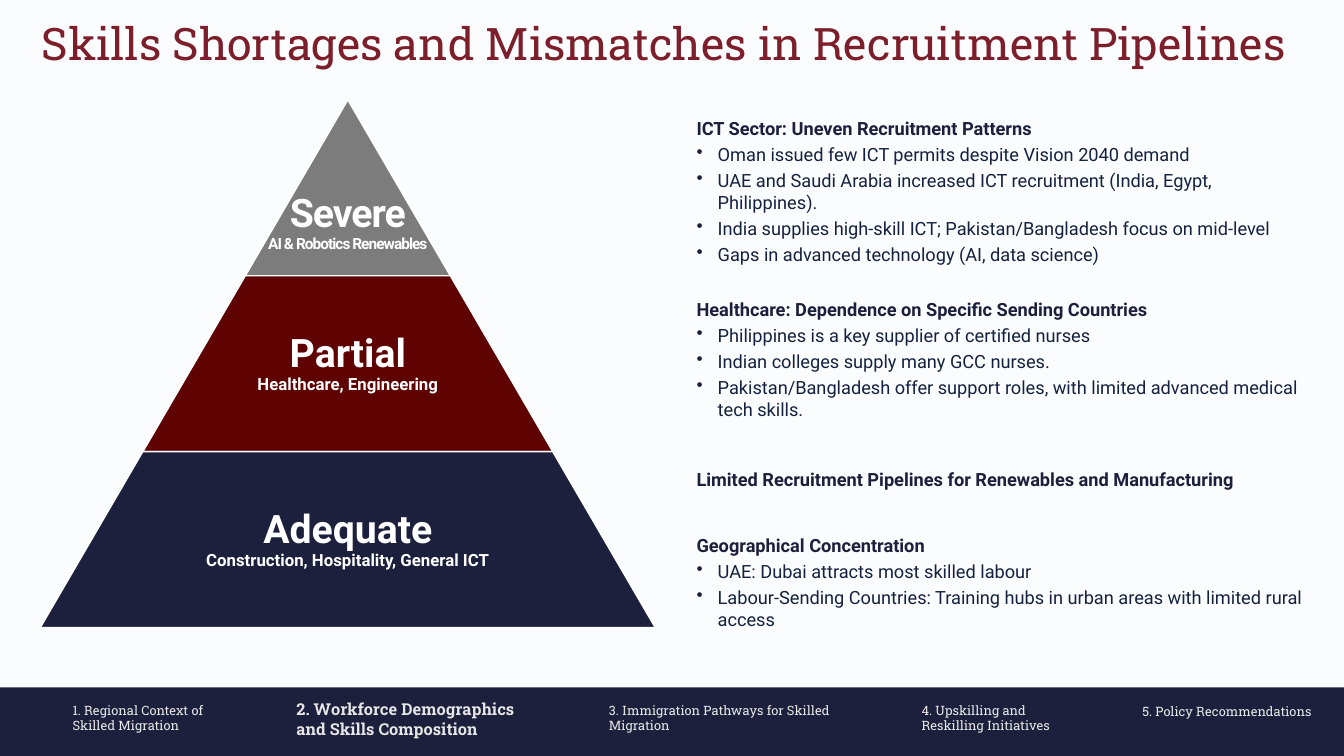
from dataclasses import dataclass

from lxml import etree
from pptx import Presentation
from pptx import util as u
from pptx.dml.color import RGBColor
from pptx.enum import shapes, text
from pptx.oxml import ns

COLOURS = {
    "paper": "FBFCFE", "navy": "1D203C", "body": "15213F", "title": "7D1E2B",
    "grey": "7C7C7C", "maroon": "5E0202", "white": "FFFFFF", "nav": "E7E6E6",
}
SANS, SLAB = "Roboto", "Roboto Slab"
WIDTH, HEIGHT = u.Inches(13.33), u.Inches(7.5)
APEX_X, PYRAMID_TOP = 25.88, 13.2
TIER_WIDTH, TIER_HEIGHT = 15.25, 23.27


@dataclass(frozen=True)
class Area:
    left: float
    top: float
    width: float
    height: float

    def lengths(self) -> tuple[int, int, int, int]:
        return (round(WIDTH * self.left / 100), round(HEIGHT * self.top / 100),
                round(WIDTH * self.width / 100), round(HEIGHT * self.height / 100))


@dataclass(frozen=True)
class Style:
    size: float
    colour: str
    font: str = SANS
    bold: bool = False
    tracking: int = 0


@dataclass(frozen=True)
class Tier:
    level: str
    sectors: str
    fill: str
    sector_size: float = 12
    tracking: int = 0
    top_inset: float = 0.04


@dataclass(frozen=True)
class Section:
    heading: str
    gap: float
    points: tuple[str, ...] = ()


@dataclass(frozen=True)
class Chapter:
    label: str
    left: float
    top: float
    width: float
    current: bool = False


TIERS = (
    Tier("Severe", "AI & Robotics Renewables", "grey", 11, -70, 0.74),
    Tier("Partial", "Healthcare, Engineering", "maroon"),
    Tier("Adequate", "Construction, Hospitality, General ICT", "navy"),
)
SECTIONS = (
    Section("ICT Sector: Uneven Recruitment Patterns", 0, (
        "Oman issued few ICT permits despite Vision 2040 demand",
        "UAE and Saudi Arabia increased ICT recruitment (India, Egypt, Philippines).",
        "India supplies high-skill ICT; Pakistan/Bangladesh focus on mid-level",
        "Gaps in advanced technology (AI, data science)")),
    Section("Healthcare: Dependence on Specific Sending Countries", 24, (
        "Philippines is a key supplier of certified nurses",
        "Indian colleges supply many GCC nurses.",
        "Pakistan/Bangladesh offer support roles, with limited advanced medical tech skills.")),
    Section("Limited Recruitment Pipelines for Renewables and Manufacturing", 34),
    Section("Geographical Concentration", 32, (
        "UAE: Dubai attracts most skilled labour",
        "Labour-Sending Countries: Training hubs in urban areas with limited rural access")),
)
CHAPTERS = (
    Chapter("1. Regional Context of Skilled Migration", 5.4, 92.93, 10.2),
    Chapter("2. Workforce Demographics and Skills Composition", 22.06, 92.53, 16.8, True),
    Chapter("3. Immigration Pathways for Skilled Migration", 45.31, 92.93, 16.8),
    Chapter("4. Upskilling and Reskilling Initiatives", 68.57, 92.93, 10.05),
    Chapter("5. Policy Recommendations", 85, 93.07, 12.83),
)


def colour(name: str) -> RGBColor:
    return RGBColor.from_string(COLOURS[name])


def add_block(page, kind, area: Area, fill: str):
    block = page.shapes.add_shape(kind, *area.lengths())
    block.shadow.inherit = False
    block.fill.solid()
    block.fill.fore_color.rgb = colour(fill)
    block.line.fill.background()
    return block


def add_frame(page, area: Area, inset: float | None = None):
    frame = page.shapes.add_textbox(*area.lengths()).text_frame
    frame.word_wrap = True
    if inset is not None:
        frame.margin_left = frame.margin_right = u.Inches(inset)
        frame.margin_top = frame.margin_bottom = u.Inches(inset)
    return frame


def write(para, words: str, style: Style) -> None:
    para.text = words
    for span in para.runs:
        span.font.size = u.Pt(style.size)
        span.font.name = style.font
        span.font.bold = style.bold
        span.font.color.rgb = colour(style.colour)
        if style.tracking:
            span.font._element.set("spc", str(style.tracking))


def add_bullet(para) -> None:
    properties = para._p.get_or_add_pPr()
    indent = u.Inches(0.21)
    properties.set("marL", str(indent))
    properties.set("indent", str(-indent))
    tint = etree.SubElement(properties, ns.qn("a:buClr"))
    etree.SubElement(tint, ns.qn("a:srgbClr"), val=COLOURS["navy"])
    etree.SubElement(properties, ns.qn("a:buChar"), char="•")


def add_title(page, words: str) -> None:
    para = add_frame(page, Area(1.4, 2.53, 96.1, 7.47)).paragraphs[0]
    write(para, words, Style(32, "title", SLAB))
    para.alignment = text.PP_ALIGN.CENTER
    para.line_spacing = u.Pt(32.5)


def add_tier(page, index: int, tier: Tier) -> None:
    width = TIER_WIDTH * (index + 1)
    area = Area(APEX_X - width / 2, PYRAMID_TOP + TIER_HEIGHT * index, width, TIER_HEIGHT)
    block = add_block(page, shapes.MSO_SHAPE.TRAPEZOID, area, tier.fill)
    block.adjustments[0] = TIER_WIDTH * WIDTH / (2 * TIER_HEIGHT * HEIGHT)
    block.line.color.rgb = colour("white")
    block.line.width = u.Pt(1)
    frame = add_frame(page, area, 0.04)
    frame.margin_top = u.Inches(tier.top_inset)
    frame.vertical_anchor = text.MSO_ANCHOR.MIDDLE
    write(frame.paragraphs[0], tier.level, Style(28, "white", SANS, True, tier.tracking))
    write(frame.add_paragraph(), tier.sectors,
          Style(tier.sector_size, "white", SANS, True, tier.tracking))
    for para in frame.paragraphs:
        para.alignment = text.PP_ALIGN.CENTER
        para.line_spacing = 0.9


def add_sections(page) -> None:
    frame = add_frame(page, Area(51.09, 14.8, 46.74, 69.3))
    for index, section in enumerate(SECTIONS):
        heading = frame.add_paragraph() if index else frame.paragraphs[0]
        write(heading, section.heading, Style(13, "navy", bold=True))
        if section.gap:
            heading.space_before = u.Pt(section.gap)
        for point in section.points:
            para = frame.add_paragraph()
            add_bullet(para)
            write(para, point, Style(13, "body"))
            para.space_before = u.Pt(3)


def add_chapter(page, chapter: Chapter) -> None:
    frame = add_frame(page, Area(chapter.left, chapter.top, chapter.width, 4.3), 0)
    size = 11.7 if chapter.current else 9.2
    write(frame.paragraphs[0], chapter.label, Style(size, "nav", SLAB, chapter.current))


def main() -> None:
    deck = Presentation()
    deck.slide_width, deck.slide_height = WIDTH, HEIGHT
    page = deck.slides.add_slide(deck.slide_layouts[6])
    page.background.fill.solid()
    page.background.fill.fore_color.rgb = colour("paper")
    add_block(page, shapes.MSO_SHAPE.RECTANGLE, Area(0, 90.93, 100, 9.07), "navy")
    add_title(page, "Skills Shortages and Mismatches in Recruitment Pipelines")
    for index, tier in enumerate(TIERS):
        add_tier(page, index, tier)
    add_sections(page)
    for chapter in CHAPTERS:
        add_chapter(page, chapter)
    deck.save("out.pptx")


if __name__ == "__main__":
    main()
